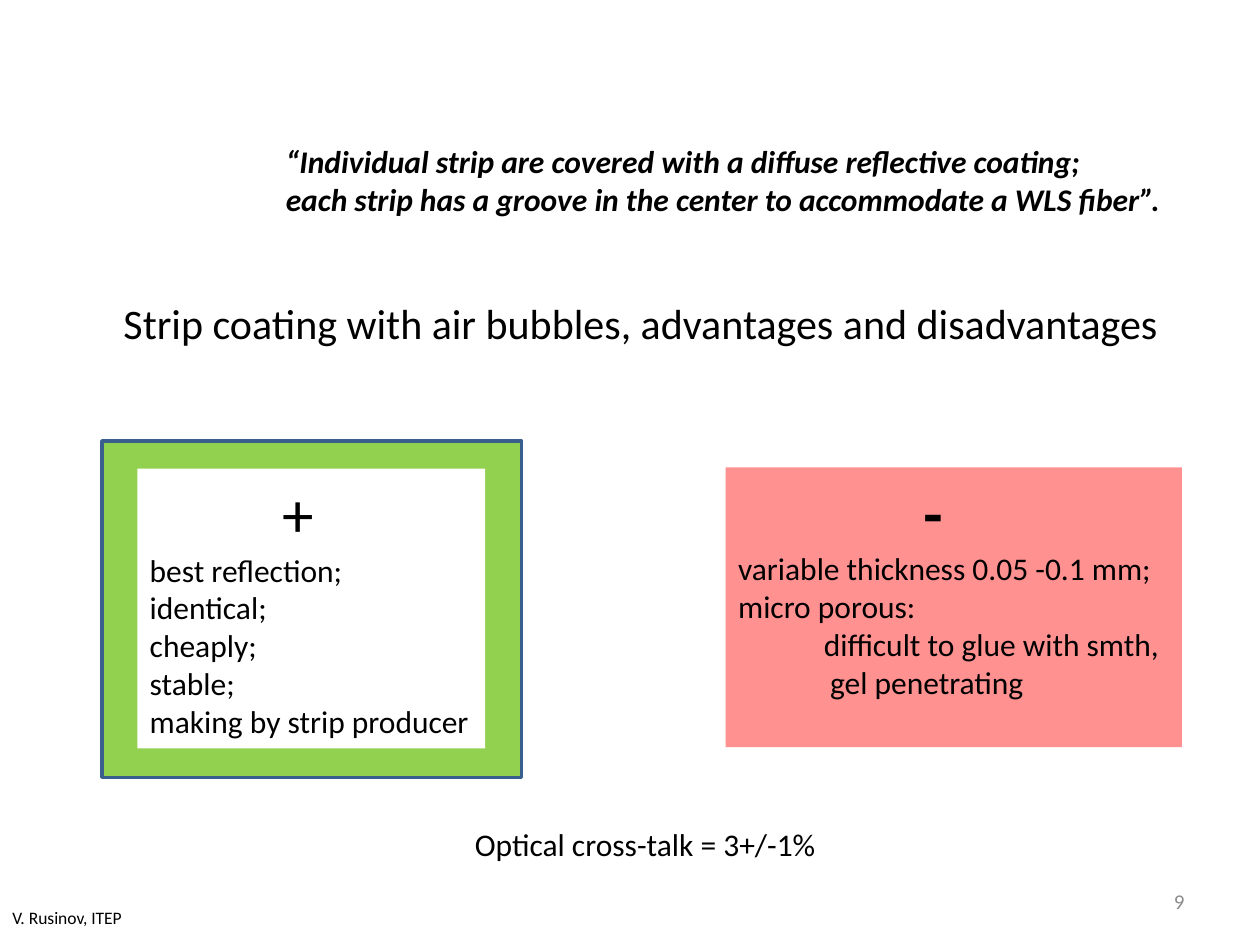
from lxml import etree
from pptx import Presentation
from pptx.dml.color import RGBColor
from pptx.enum.shapes import MSO_SHAPE
from pptx.enum.text import MSO_ANCHOR, PP_ALIGN
from pptx.oxml.ns import qn
from pptx.util import Inches, Pt

RECTANGLE = MSO_SHAPE.RECTANGLE
TOP, MIDDLE = MSO_ANCHOR.TOP, MSO_ANCHOR.MIDDLE
LEFT, RIGHT = PP_ALIGN.LEFT, PP_ALIGN.RIGHT
TITLE_ONLY = 5

TITLE = "Strip coating with air bubbles, advantages and disadvantages"
TITLE_AREA = (0.88, 2.31, 8.51, 0.5)

# Area (left, top, width, height), lines, text format
NOTES = [
    ((2.17, 1.08, 7.23, 0.71),
     ["“Individual strip are covered with a diffuse reflective coating;",
      "each strip has a groove in the center to accommodate a WLS fiber”."],
     dict(size=18, bold=True, italic=True)),
    ((3.67, 6.5, 2.94, 0.4), ["Optical cross-talk = 3+/-1%"], dict(size=18)),
    ((0, 7.15, 1.1, 0.3), ["V. Rusinov, ITEP"], dict(size=10)),
    ((7.17, 6.95, 2.33, 0.4), ["9"],
     dict(size=12, color="8C8C8C", align=RIGHT, anchor=MIDDLE)),
]

FRAME_AREA = (0.81, 3.5, 3.33, 2.67)

# Each line: text, indent in inches
CARDS = [
    dict(area=(1.09, 3.72, 2.76, 2.22), fill="FFFFFF", opacity=100,
         sign="+", sign_indent=1.05, sign_bold=False,
         lines=[("best reflection;", 0), ("identical;", 0), ("cheaply;", 0),
                ("stable;", 0), ("making by strip producer", 0)]),
    dict(area=(5.76, 3.71, 3.62, 2.22), fill="FF0000", opacity=43,
         sign="-", sign_indent=1.47, sign_bold=True,
         lines=[("variable thickness 0.05 -0.1 mm;", 0), ("micro porous:", 0),
                ("difficult to glue with smth,", 0.68),
                ("gel penetrating", 0.73)]),
]


def rgb(color):
    return RGBColor.from_string(color)


def place(shape, area):
    shape.left, shape.top, shape.width, shape.height = map(Inches, area)


def format_para(para, size, bold=False, italic=False, color="000000",
                align=LEFT, indent=0):
    para.alignment = align
    font = para.font
    font.name, font.size = "Calibri", Pt(size)
    font.bold, font.italic = bold, italic
    font.color.rgb = rgb(color)
    if indent:
        para._p.get_or_add_pPr().set("marL", str(Inches(indent)))


def write(shape, lines, anchor=TOP):
    """Fill a shape with (text, format) lines, one paragraph each."""
    frame = shape.text_frame
    frame.word_wrap = True
    frame.vertical_anchor = anchor
    frame.text = "\n".join(text for text, _ in lines)
    for para, (_, style) in zip(frame.paragraphs, lines):
        format_para(para, **style)


def add_box(page, area, fill, opacity=100):
    box = page.shapes.add_shape(RECTANGLE, *map(Inches, area))
    box.shadow.inherit = False
    box.fill.solid()
    box.fill.fore_color.rgb = rgb(fill)
    box.line.fill.background()
    if opacity < 100:
        color = box.fill._xPr.find(".//" + qn("a:srgbClr"))
        etree.SubElement(color, qn("a:alpha"), val=str(opacity * 1000))
    return box


def add_card(page, card):
    box = add_box(page, card["area"], card["fill"], card["opacity"])
    sign = (card["sign"], dict(size=36, bold=card["sign_bold"],
                               indent=card["sign_indent"]))
    write(box, [sign] + [(text, dict(size=18, indent=indent))
                         for text, indent in card["lines"]])


def main():
    deck = Presentation()
    deck.slide_width, deck.slide_height = Inches(10), Inches(7.5)
    page = deck.slides.add_slide(deck.slide_layouts[TITLE_ONLY])

    title = page.shapes.title
    place(title, TITLE_AREA)
    write(title, [(TITLE, dict(size=24))])

    frame = add_box(page, FRAME_AREA, "92D050")
    frame.line.color.rgb = rgb("3A5F8C")
    frame.line.width = Pt(2)

    for card in CARDS:
        add_card(page, card)

    for area, lines, style in NOTES:
        box = page.shapes.add_textbox(*map(Inches, area))
        style = dict(style)
        anchor = style.pop("anchor", TOP)
        write(box, [(line, style) for line in lines], anchor)

    deck.save("out.pptx")


if __name__ == "__main__":
    main()
